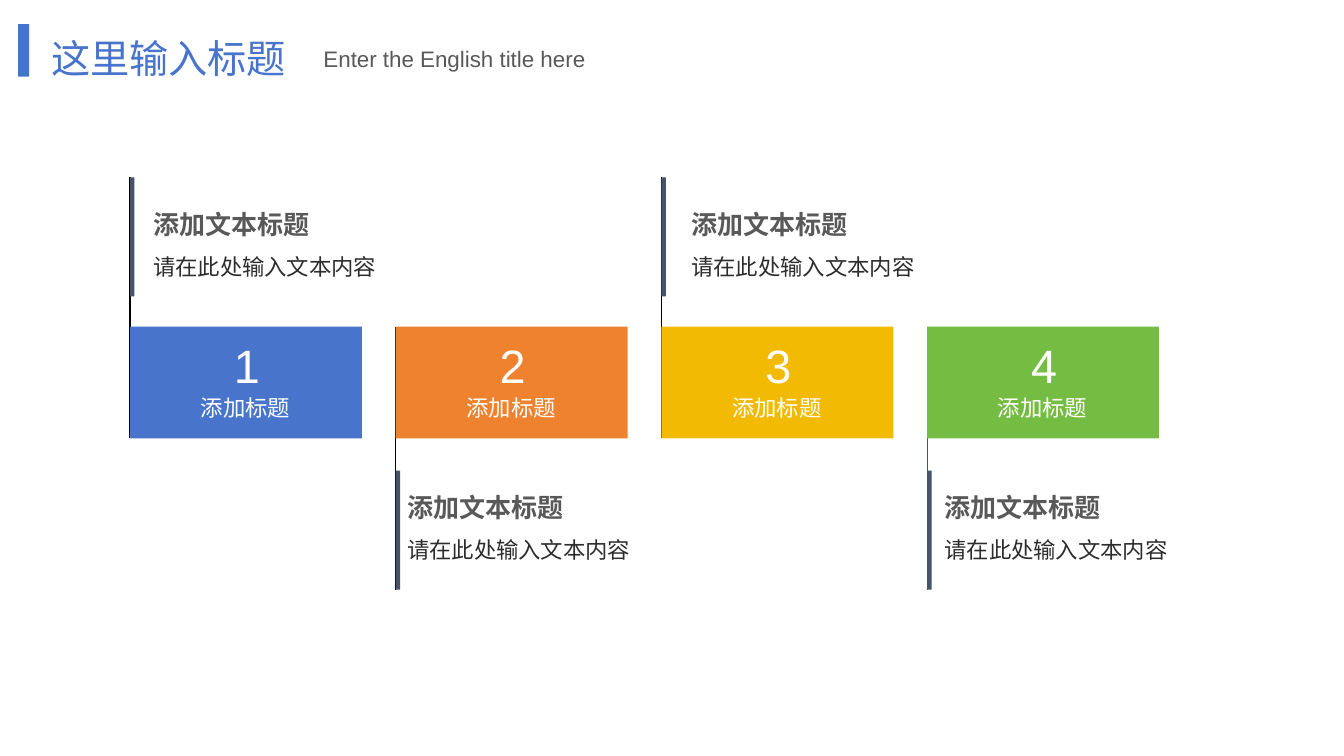
from dataclasses import dataclass

import pptx
import pptx.dml.color
import pptx.enum.shapes
import pptx.enum.text
import pptx.oxml.ns
import pptx.presentation
import pptx.shapes.autoshape
import pptx.slide
import pptx.util
from lxml import etree

COLOURS: dict[str, str] = {
    "marker": "004ABA",
    "blue": "4874CB",
    "orange": "EE822F",
    "yellow": "F2BA02",
    "green": "75BD42",
    "slate": "44546A",
    "black": "000000",
    "white": "FFFFFF",
    "heading": "595959",
    "body": "2D2D2D",
}
LATIN_FONT = "Arial"
TITLE_FONT = "Noto Sans CJK SC"
SLIDE_WIDTH = pptx.util.Inches(13.333)
SLIDE_HEIGHT = pptx.util.Inches(7.5)

FIRST_COLUMN = 9.68
COLUMN_PITCH = 19.77
CARD_TOP = 43.2
CARD_WIDTH = 17.25
CARD_HEIGHT = 14.8
BAR_WIDTH = 0.33
BAR_HEIGHT = 15.73


@dataclass(frozen=True)
class Area:
    """Left, top, width and height as percentages of the slide."""
    left: float
    top: float
    width: float
    height: float


@dataclass(frozen=True)
class Line:
    text: str
    size: float
    colour: str
    bold: bool = False
    font: str = LATIN_FONT


@dataclass(frozen=True)
class Step:
    number: str
    card_colour: str
    stem_colour: str
    above: bool
    detail_offset: float


STEPS = [
    Step("1", "blue", "black", True, 0.97),
    Step("2", "orange", "black", False, 0.1),
    Step("3", "yellow", "black", True, 1.48),
    Step("4", "green", "slate", False, 0.54),
]


def across(share: float) -> int:
    return round(SLIDE_WIDTH * share / 100)


def down(share: float) -> int:
    return round(SLIDE_HEIGHT * share / 100)


def place(area: Area) -> tuple[int, int, int, int]:
    return across(area.left), down(area.top), across(area.width), down(area.height)


def rgb(name: str) -> pptx.dml.color.RGBColor:
    return pptx.dml.color.RGBColor.from_string(COLOURS[name])


def add_block(page: pptx.slide.Slide, area: Area, colour: str) -> pptx.shapes.autoshape.Shape:
    block = page.shapes.add_shape(pptx.enum.shapes.MSO_SHAPE.RECTANGLE, *place(area))
    block.shadow.inherit = False
    block.fill.solid()
    block.fill.fore_color.rgb = rgb(colour)
    block.line.fill.background()
    return block


def add_stem(page: pptx.slide.Slide, left: float, start: float, end: float, colour: str) -> None:
    stem = page.shapes.add_connector(
        pptx.enum.shapes.MSO_CONNECTOR.STRAIGHT,
        across(left), down(start), across(left), down(end))
    stem.line.color.rgb = rgb(colour)
    stem.line.width = pptx.util.Pt(1)
    etree.SubElement(stem._element.spPr, pptx.oxml.ns.qn("a:effectLst"))


def add_text(page: pptx.slide.Slide, area: Area, lines: list[Line], spacing: float = 1.0,
             centred: bool = False) -> None:
    box = page.shapes.add_textbox(*place(area))
    frame = box.text_frame
    frame.word_wrap = True
    frame.auto_size = pptx.enum.text.MSO_AUTO_SIZE.SHAPE_TO_FIT_TEXT
    if centred:
        frame.vertical_anchor = pptx.enum.text.MSO_ANCHOR.MIDDLE
    frame.text = "\n".join(line.text for line in lines)
    for para, line in zip(frame.paragraphs, lines):
        para.line_spacing = spacing
        if centred:
            para.alignment = pptx.enum.text.PP_ALIGN.CENTER
        for span in para.runs:
            span.font.name = line.font
            span.font.size = pptx.util.Pt(line.size)
            span.font.bold = line.bold
            span.font.color.rgb = rgb(line.colour)


def add_header(page: pptx.slide.Slide) -> None:
    marker = add_block(page, Area(1.35, 3.2, 0.82, 6.93), "marker")
    colour = marker._element.spPr.find(".//" + pptx.oxml.ns.qn("a:srgbClr"))
    etree.SubElement(colour, pptx.oxml.ns.qn("a:alpha"), val="75000")
    add_text(page, Area(3.08, -0.8, 31.1, 12.27),
             [Line("这里输入标题", 28, "blue", font=TITLE_FONT)], 1.75)
    add_text(page, Area(23.33, 5.33, 41.2, 4.93),
             [Line("Enter the English title here", 16, "heading")])


def add_step(page: pptx.slide.Slide, step: Step, left: float) -> None:
    card_bottom = CARD_TOP + CARD_HEIGHT
    if step.above:
        bar_top, detail_top = 23.47, 24.8
        stem_start, stem_end = bar_top, card_bottom
    else:
        bar_top = detail_top = 62.27
        stem_start, stem_end = bar_top + BAR_HEIGHT, CARD_TOP
    add_stem(page, left, stem_start, stem_end, step.stem_colour)
    add_block(page, Area(left, bar_top, BAR_WIDTH, BAR_HEIGHT), "slate")
    add_block(page, Area(left, CARD_TOP, CARD_WIDTH, CARD_HEIGHT), step.card_colour)
    add_text(page, Area(left + 0.71, 51.87, 15.75, 4.53),
             [Line("添加标题", 16, "white")], 0.9, centred=True)
    add_text(page, Area(left + 4.27, 44.67, 8.85, 8.13),
             [Line(step.number, 33.4, "white")], 0.9, centred=True)
    add_text(page, Area(left + step.detail_offset, detail_top, 23.1, 12.93),
             [Line("添加文本标题", 18.6, "heading", bold=True),
              Line("请在此处输入文本内容", 16, "body")], 1.5)


def main() -> None:
    deck = pptx.Presentation()
    deck.slide_width = SLIDE_WIDTH
    deck.slide_height = SLIDE_HEIGHT
    page = deck.slides.add_slide(deck.slide_layouts[6])
    add_header(page)
    for column, step in enumerate(STEPS):
        add_step(page, step, FIRST_COLUMN + column * COLUMN_PITCH)
    deck.save("out.pptx")


if __name__ == "__main__":
    main()
